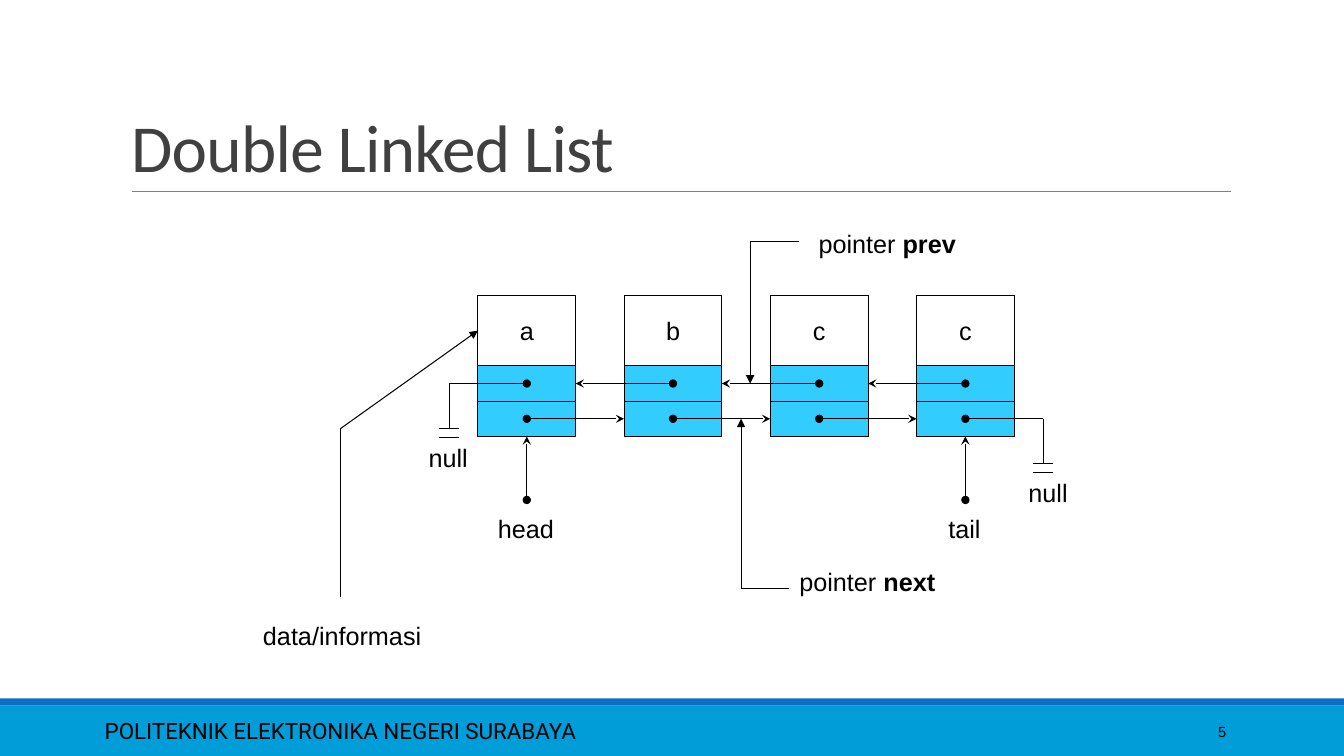
from pptx import Presentation
from pptx.dml.color import RGBColor
from pptx.enum.shapes import MSO_CONNECTOR, MSO_SHAPE
from pptx.enum.text import MSO_ANCHOR, MSO_AUTO_SIZE, PP_ALIGN
from pptx.oxml.ns import qn
from pptx.util import Inches, Pt
from lxml import etree

LEFT, CENTER, RIGHT = PP_ALIGN.LEFT, PP_ALIGN.CENTER, PP_ALIGN.RIGHT
TOP, MIDDLE, BOTTOM = MSO_ANCHOR.TOP, MSO_ANCHOR.MIDDLE, MSO_ANCHOR.BOTTOM
STRAIGHT, RECTANGLE = MSO_CONNECTOR.STRAIGHT, MSO_SHAPE.RECTANGLE
SITE_LEFT, SITE_BOTTOM, SITE_RIGHT = 1, 2, 3

# Content
TITLE = "Double Linked List"
FOOTER = "POLITEKNIK ELEKTRONIKA NEGERI SURABAYA"
PAGE_NUMBER = "5"
NODES = ["a", "b", "c", "c"]
# (spans as (text, bold), box, alignment)
LABELS = [
    ([("head", False)], (4.54, 5.04, 1.35, 0.42), CENTER),
    ([("tail", False)], (8.89, 5.04, 1.35, 0.42), CENTER),
    ([("null", False)], (3.77, 4.34, 1.35, 0.42), CENTER),
    ([("null", False)], (9.96, 4.69, 0.87, 0.42), CENTER),
    ([("pointer ", False), ("prev", True)], (8.02, 2.22, 2.42, 0.42), LEFT),
    ([("pointer ", False), ("next", True)], (7.83, 5.57, 1.93, 0.42), LEFT),
    ([("data/informasi", False)], (2.51, 6.1, 2.32, 0.42), LEFT),
]
DIAGRAM_TEXT = {"name": "Arial", "size": Pt(18)}
BLACK, CELL_BLUE = "000000", "33CCFF"

# Node geometry
NODE_LEFT, NODE_TOP, NODE_STEP, NODE_WIDTH = 4.74, 2.93, 1.45, 0.97
DATA_HEIGHT, LINK_HEIGHT = 0.7, 0.35
PREV_TOP = NODE_TOP + DATA_HEIGHT
NEXT_TOP = PREV_TOP + LINK_HEIGHT
PREV_Y, NEXT_Y = PREV_TOP + LINK_HEIGHT / 2, NEXT_TOP + LINK_HEIGHT / 2
NODE_BOTTOM = NEXT_TOP + LINK_HEIGHT

deck = Presentation()
deck.slide_width, deck.slide_height = Inches(13.33), Inches(7.5)
page = deck.slides.add_slide(deck.slide_layouts[5])


def color(hex_value):
    return RGBColor.from_string(hex_value)


def write(shape, spans, formats, align=LEFT, anchor=TOP, ink=BLACK):
    frame = shape.text_frame
    frame.word_wrap = True
    frame.auto_size = MSO_AUTO_SIZE.NONE
    frame.vertical_anchor = anchor
    para = frame.paragraphs[0]
    para.alignment = align
    for text, bold in spans:
        span = para.add_run()
        span.text = text
        span.font.bold = bold
        span.font.color.rgb = color(ink)
        for name, value in formats.items():
            setattr(span.font, name, value)
    return para


def add_text(box, spans, formats, align=LEFT, anchor=TOP):
    shape = page.shapes.add_textbox(*map(Inches, box))
    write(shape, spans, formats, align, anchor)


def add_box(box, fill=None, outline=None):
    shape = page.shapes.add_shape(RECTANGLE, *map(Inches, box))
    shape.shadow.inherit = False
    if fill:
        shape.fill.solid()
        shape.fill.fore_color.rgb = color(fill)
    else:
        shape.fill.background()
    if outline:
        shape.line.color.rgb = color(outline)
        shape.line.width = Pt(0.75)
    else:
        shape.line.fill.background()
    return shape


def add_line(start, end, head=None, tail=None, target=None, ink=BLACK, width=0.75):
    """Draw a line; target is (shape, site) when its end joins a shape."""
    line = page.shapes.add_connector(STRAIGHT, *map(Inches, (*start, *end)))
    line.line.color.rgb = color(ink)
    line.line.width = Pt(width)
    outline = line.line._get_or_add_ln()
    for tag, kind in (("a:headEnd", head), ("a:tailEnd", tail)):
        if kind:
            etree.SubElement(outline, qn(tag)).set("type", kind)
    etree.SubElement(line._element.spPr, qn("a:effectLst"))
    if target:
        line.end_connect(*target)


def add_null(x, start_y, end_y):
    """Draw a drop line closed by two short bars."""
    add_line((x, start_y), (x, end_y))
    for bar_y in (end_y, end_y + 0.09):
        add_line((x - 0.1, bar_y), (x + 0.1, bar_y))


# Footer bands, title rule and texts
add_box((0, 7, 13.33, 0.5), "009DD9")
add_box((0, 6.93, 13.33, 0.07), "0F6FC6")
add_line((1.31, 1.9), (12.21, 1.9), ink="808080", width=0.5)
add_text((0.94, 7.05, 8.41, 0.4), [(FOOTER, False)],
         {"name": "Roboto", "size": Pt(16)}, anchor=MIDDLE)
add_text((10.83, 7.06, 1.43, 0.4), [(PAGE_NUMBER, False)],
         {"name": "Arial", "size": Pt(10.5)}, RIGHT, MIDDLE)

title = page.shapes.title
title.left, title.top, title.width, title.height = map(Inches, (1.2, 0.31, 11, 1.59))
title_para = write(title, [(TITLE, False)], {"name": "Calibri", "size": Pt(48)},
                   anchor=BOTTOM, ink="404040")
title_para.line_spacing = 0.85
title_para.runs[0]._r.get_or_add_rPr().set("spc", "-50")

# Nodes: a data cell over a prev cell and a next cell
data_cells, prev_cells, next_cells, centers = [], [], [], []
for index, letter in enumerate(NODES):
    left = NODE_LEFT + index * NODE_STEP
    centers.append(left + NODE_WIDTH / 2)
    data_cells.append(add_box((left, NODE_TOP, NODE_WIDTH, DATA_HEIGHT), None, BLACK))
    write(data_cells[-1], [(letter, False)], DIAGRAM_TEXT, CENTER, MIDDLE)
    for cells, top in ((prev_cells, PREV_TOP), (next_cells, NEXT_TOP)):
        cells.append(add_box((left, top, NODE_WIDTH, LINK_HEIGHT), CELL_BLUE, BLACK))

# Links between neighbouring nodes
for index in range(len(NODES) - 1):
    here, there = centers[index], centers[index + 1]
    add_line((here, NEXT_Y), (there - NODE_WIDTH / 2, NEXT_Y), "oval", "stealth",
             (next_cells[index + 1], SITE_LEFT))
    add_line((there, PREV_Y), (here + NODE_WIDTH / 2, PREV_Y), "oval", "stealth",
             (prev_cells[index], SITE_RIGHT))

# Null ends
first, last = centers[0], centers[-1]
add_line((first, PREV_Y), (first - 0.77, PREV_Y), "oval")
add_null(first - 0.77, PREV_Y, 4.25)
add_line((last, NEXT_Y), (last + 0.77, NEXT_Y), "oval")
add_null(last + 0.77, NEXT_Y, 4.6)

# Head and tail pointers
for x, cell in ((first, next_cells[0]), (last, next_cells[-1])):
    add_line((x, 4.96), (x, NODE_BOTTOM), "oval", "stealth", (cell, SITE_BOTTOM))

# Callout lines to the data cell, a prev link and a next link
add_line((3.38, 5.92), (3.38, 4.25))
add_line((3.38, 4.25), (NODE_LEFT, 3.28), tail="triangle",
         target=(data_cells[0], SITE_LEFT))
for x, y, link_y in ((7.44, 2.4, PREV_Y), (7.35, 5.84, NEXT_Y)):
    add_line((x + 0.48, y), (x, y))
    add_line((x, y), (x, link_y), tail="triangle")

for spans, box, align in LABELS:
    add_text(box, spans, DIAGRAM_TEXT, align)

deck.save("out.pptx")
